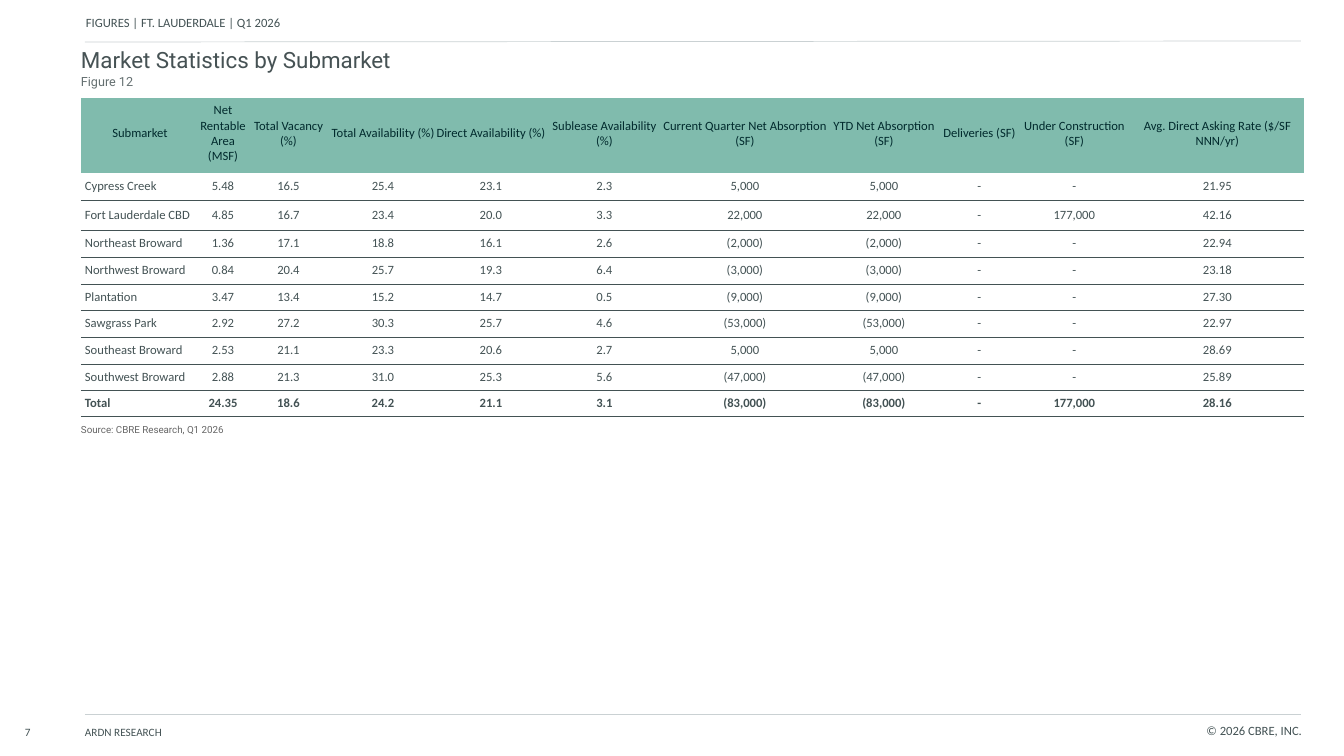
from lxml import etree
from pptx import Presentation
from pptx import util as u
from pptx.dml.color import RGBColor
from pptx.enum import shapes, text
from pptx.oxml import ns

COLORS = {
    "slate": "435254", "title": "465254", "caption": "657071", "source": "666666",
    "header_text": "012A2D", "header_fill": "80BBAD", "rule": "CAD1D3", "white": "FFFFFF",
}
LEFT, CENTER, RIGHT = text.PP_ALIGN.LEFT, text.PP_ALIGN.CENTER, text.PP_ALIGN.RIGHT

COLUMN_WIDTHS = [118, 48, 83, 106, 110, 117, 164, 114, 77, 113, 173]
ROW_HEIGHTS = [75, 27, 30] + ([27, 27, 26] * 3)[:8]
HEADINGS = [
    "Submarket", "Net Rentable Area (MSF)", "Total Vacancy (%)",
    "Total Availability (%)", "Direct Availability (%)", "Sublease Availability (%)",
    "Current Quarter Net Absorption (SF)", "YTD Net Absorption (SF)",
    "Deliveries (SF)", "Under Construction (SF)", "Avg. Direct Asking Rate ($/SF NNN/yr)",
]
SUBMARKETS = [
    ["Cypress Creek", "5.48", "16.5", "25.4", "23.1", "2.3", "5,000", "5,000", "-", "-", "21.95"],
    ["Fort Lauderdale CBD", "4.85", "16.7", "23.4", "20.0", "3.3", "22,000", "22,000", "-",
     "177,000", "42.16"],
    ["Northeast Broward", "1.36", "17.1", "18.8", "16.1", "2.6", "(2,000)", "(2,000)", "-", "-",
     "22.94"],
    ["Northwest Broward", "0.84", "20.4", "25.7", "19.3", "6.4", "(3,000)", "(3,000)", "-", "-",
     "23.18"],
    ["Plantation", "3.47", "13.4", "15.2", "14.7", "0.5", "(9,000)", "(9,000)", "-", "-", "27.30"],
    ["Sawgrass Park", "2.92", "27.2", "30.3", "25.7", "4.6", "(53,000)", "(53,000)", "-", "-",
     "22.97"],
    ["Southeast Broward", "2.53", "21.1", "23.3", "20.6", "2.7", "5,000", "5,000", "-", "-",
     "28.69"],
    ["Southwest Broward", "2.88", "21.3", "31.0", "25.3", "5.6", "(47,000)", "(47,000)", "-", "-",
     "25.89"],
    ["Total", "24.35", "18.6", "24.2", "21.1", "3.1", "(83,000)", "(83,000)", "-", "177,000",
     "28.16"],
]
SOURCE = "Source: CBRE Research, Q1 2026"


def px(length):
    return u.Emu(round(length * 914400 / 100.8))


def set_all(target, **values):
    for name, value in values.items():
        setattr(target, name, value)


def write(frame, words, size, color, font="Calibri", align=LEFT, bold=False, spacing=1.0):
    frame.text = words
    paragraph = frame.paragraphs[0]
    set_all(paragraph, alignment=align, line_spacing=spacing,
            space_before=u.Pt(0), space_after=u.Pt(0))
    run_font = paragraph.runs[0].font
    set_all(run_font, name=font, size=u.Pt(size), bold=bold)
    run_font.color.rgb = RGBColor.from_string(COLORS[color])


def fit_frame(shape, box, anchor=text.MSO_ANCHOR.TOP):
    for side, length in zip(("left", "top", "width", "height"), box):
        setattr(shape, side, px(length))
    set_all(shape.text_frame, margin_left=0, margin_right=0, margin_top=0, margin_bottom=0,
            word_wrap=True, auto_size=text.MSO_AUTO_SIZE.NONE, vertical_anchor=anchor)


def add_label(slide, box, words, size, color, anchor=text.MSO_ANCHOR.TOP, **style):
    label = slide.shapes.add_textbox(0, 0, 0, 0)
    fit_frame(label, box, anchor)
    write(label.text_frame, words, size, color, **style)


def add_rule(slide, start_y, end_y):
    rule = slide.shapes.add_connector(
        shapes.MSO_CONNECTOR.STRAIGHT, px(85), px(start_y), px(1301), px(end_y))
    rule.line.color.rgb = RGBColor.from_string(COLORS["rule"])
    rule.line.width = u.Pt(0.5)
    etree.SubElement(rule._element.spPr, ns.qn("a:effectLst"))


def set_borders(cell, ruled):
    properties = cell._tc.get_or_add_tcPr()
    for side in ("lnL", "lnR", "lnT", "lnB"):
        line = etree.SubElement(properties, ns.qn(f"a:{side}"), w=str(u.Pt(0.5)))
        if side in ruled:
            fill = etree.SubElement(line, ns.qn("a:solidFill"))
            etree.SubElement(fill, ns.qn("a:srgbClr"), val=COLORS["slate"])
        else:
            etree.SubElement(line, ns.qn("a:noFill"))


def format_cell(cell, ruled, fill, left=0, right=0, bottom=0):
    set_all(cell, margin_left=px(left), margin_right=px(right), margin_top=0,
            margin_bottom=px(bottom), vertical_anchor=text.MSO_ANCHOR.MIDDLE)
    set_borders(cell, ruled)
    cell.fill.solid()
    cell.fill.fore_color.rgb = RGBColor.from_string(COLORS[fill])


def add_statistics(slide):
    rows, columns = len(ROW_HEIGHTS), len(COLUMN_WIDTHS)
    table = slide.shapes.add_table(rows, columns, px(81), px(98), px(sum(COLUMN_WIDTHS)),
                                   px(sum(ROW_HEIGHTS))).table
    set_all(table, first_row=False, horz_banding=False)
    for column, width in zip(table.columns, COLUMN_WIDTHS):
        column.width = px(width)
    for row, height in zip(table.rows, ROW_HEIGHTS):
        row.height = px(height)

    # Header row
    for cell, heading in zip(table.rows[0].cells, HEADINGS):
        format_cell(cell, (), "header_fill", bottom=4)
        write(cell.text_frame, heading, 9, "header_text", align=CENTER)

    # Submarkets and total
    for number, record in enumerate(SUBMARKETS, 1):
        ruled = ("lnB",) if number == 1 else ("lnT", "lnB")
        for index, value in enumerate(record):
            cell = table.cell(number, index)
            format_cell(cell, ruled, "white", left=0 if index else 4)
            write(cell.text_frame, value, 9, "slate", align=CENTER if index else LEFT,
                  bold=record[0] == "Total")

    # Source row across the table
    for cell in table.rows[rows - 1].cells:
        format_cell(cell, ("lnT",), "white", right=3)
    source = table.cell(rows - 1, 0)
    source.merge(table.cell(rows - 1, columns - 1))
    write(source.text_frame, SOURCE, 7, "source", font="Roboto")


def main():
    deck = Presentation()
    set_all(deck, slide_width=px(1344), slide_height=px(756))
    slide = deck.slides.add_slide(deck.slide_layouts[5])

    # Page header
    add_label(slide, (86, 0, 499, 30), "FIGURES | FT. LAUDERDALE | Q1 2026", 9, "slate",
              anchor=text.MSO_ANCHOR.BOTTOM, spacing=0.9)
    add_rule(slide, 42, 41)

    # Title and figure number
    title = slide.shapes.title
    fit_frame(title, (81, 46, 1223, 27))
    write(title.text_frame, "Market Statistics by Submarket", 16, "title", font="Roboto")
    add_label(slide, (81, 74, 1223, 18), "Figure 12", 9, "caption", font="Roboto")

    add_statistics(slide)

    # Page footer
    add_rule(slide, 714, 714)
    add_label(slide, (25, 725, 28, 20), "7", 8, "slate")
    add_label(slide, (85, 725, 369, 20), "ARDN RESEARCH", 8, "slate")
    add_label(slide, (574, 725, 728, 20), "© 2026 CBRE, INC.", 9, "slate", align=RIGHT,
              spacing=0.9)

    deck.save("out.pptx")


if __name__ == "__main__":
    main()
